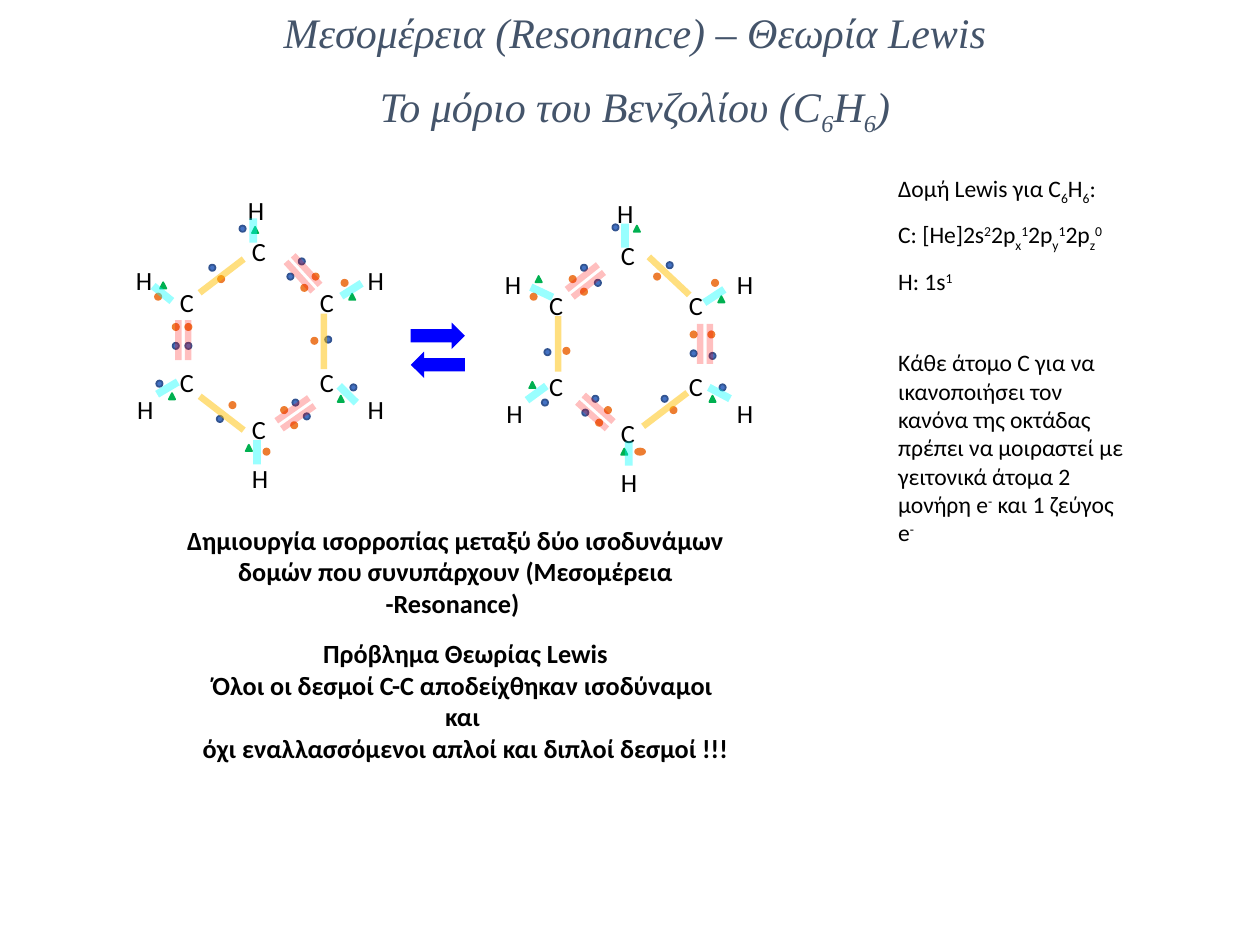
"""Build the slide on benzene resonance in Lewis theory."""
from lxml.etree import SubElement
from pptx import Presentation
from pptx.dml.color import RGBColor
from pptx.enum.shapes import MSO_SHAPE as SHAPE
from pptx.enum.text import MSO_ANCHOR, MSO_AUTO_SIZE, PP_ALIGN
from pptx.oxml.ns import qn
from pptx.util import Inches, Pt

BLACK = RGBColor(0x00, 0x00, 0x00)
SLATE = RGBColor(0x44, 0x54, 0x6A)
BLUE = RGBColor(0x44, 0x72, 0xC4)
DARK_BLUE = RGBColor(0x32, 0x54, 0x91)
ORANGE = RGBColor(0xED, 0x7D, 0x31)
GREEN = RGBColor(0x00, 0xB0, 0x50)
RED = RGBColor(0xFF, 0x00, 0x00)
GOLD = RGBColor(0xFF, 0xC0, 0x00)
CYAN = RGBColor(0x00, 0xFF, 0xFF)
ARROW_BLUE = RGBColor(0x00, 0x00, 0xFF)
BASELINES = {"_": "-25000", "~": "-30000", "^": "30000"}

presentation = Presentation()
presentation.slide_width, presentation.slide_height = Inches(10), Inches(7.5)
CELL = presentation.slide_width // 1000
slide = presentation.slides.add_slide(presentation.slide_layouts[5])


def add_mark(kind, box, fill, line=None, rotation=0, opacity=100):
    shape = slide.shapes.add_shape(kind, *(CELL * value for value in box))
    shape.shadow.inherit = False
    shape.rotation = rotation
    shape.fill.solid()
    shape.fill.fore_color.rgb = fill
    if line is None:
        shape.line.fill.background()
    else:
        shape.line.color.rgb = line
        shape.line.width = Pt(1)
    if opacity < 100:
        color = shape._element.spPr.find(qn("a:solidFill"))[0]
        SubElement(color, qn("a:alpha")).set("val", str(opacity * 1000))


def write_text(shape, box, paragraphs, size, color=BLACK, font="Calibri",
               align=PP_ALIGN.LEFT, gaps=(), bold=False, italic=False):
    shape.left, shape.top, shape.width, shape.height = (CELL * value for value in box)
    frame = shape.text_frame
    frame.word_wrap = True
    frame.auto_size = MSO_AUTO_SIZE.NONE
    frame.vertical_anchor = MSO_ANCHOR.TOP
    for index, pieces in enumerate(paragraphs):
        paragraph = frame.add_paragraph() if index else frame.paragraphs[0]
        paragraph.alignment = align
        if gaps:
            paragraph.space_before = Pt(gaps[index])
        for piece in pieces:
            run = paragraph.add_run()
            run.text = piece.lstrip("_~^")
            run.font.size, run.font.name = Pt(size), font
            run.font.bold, run.font.italic = bold, italic
            run.font.color.rgb = color
            if piece[0] in BASELINES:
                run._r.get_or_add_rPr().set("baseline", BASELINES[piece[0]])


write_text(
    slide.shapes.title, (75, 0, 858, 111),
    [["Μεσομέρεια (Resonance) – Θεωρία Lewis"],
     ["Το μόριο του Βενζολίου (C", "_6", "H", "_6", ")"]],
    24, SLATE, "Times New Roman", PP_ALIGN.CENTER, (13.5, 13.5), italic=True)

ATOMS = {
    "C": [(190, 182), (133, 222), (133, 286), (244, 222), (190, 323), (244, 286)],
    "H": [(98, 205), (190, 362), (282, 205), (187, 149), (99, 307), (282, 307)],
}
for ring_x, ring_y in [(0, 0), (293, 3)]:
    for symbol, spots in ATOMS.items():
        for x, y in spots:
            box = (x + ring_x, y + ring_y, 27, 35)
            write_text(slide.shapes.add_textbox(0, 0, 0, 0), box, [[symbol]], 15)

ELECTRONS = [
    (SHAPE.OVAL, BLUE, DARK_BLUE, [
        (166, 210), (237, 205), (228, 217), (190, 179), (258, 267), (232, 317),
        (241, 328), (278, 305), (172, 330), (124, 302), (137, 272), (147, 272),
        (529, 208), (461, 210), (472, 222), (486, 178), (548, 278), (563, 280),
        (571, 305), (525, 314), (470, 314), (462, 325), (430, 317), (432, 277)]),
    (SHAPE.OVAL, ORANGE, ORANGE, [
        (239, 226), (248, 217), (271, 222), (247, 268), (223, 323), (231, 335),
        (209, 356), (182, 319), (137, 257), (147, 257), (123, 233), (173, 219),
        (519, 217), (548, 263), (562, 263), (565, 222), (532, 323), (480, 323),
        (473, 333), (447, 276), (452, 219), (461, 229), (421, 233)]),
    (SHAPE.ISOSCELES_TRIANGLE, GREEN, GREEN, [
        (127, 224), (277, 233), (200, 180), (268, 314), (195, 353), (134, 312),
        (425, 219), (503, 179), (570, 235), (563, 314), (493, 356), (420, 303)]),
]
for kind, fill, line, spots in ELECTRONS:
    for x, y in spots:
        add_mark(kind, (x, y, 5, 5), fill, line)
add_mark(SHAPE.OVAL, (504, 356, 8, 5), ORANGE, ORANGE)

BONDS = [
    (SHAPE.MATH_EQUAL, RED, 25, 43, 22, [
        (219, 206, 47.8), (443, 212, 141.7), (124, 259, 90),
        (213, 317, 324.9), (451, 316, 41.7), (538, 262, 90)]),
    (SHAPE.MATH_MINUS, GOLD, 50, 60, 22, [
        (146, 317, 37.6), (227, 260, 90), (498, 314, 322.7),
        (146, 208, 322.6), (501, 208, 43.2), (413, 262, 90)]),
    (SHAPE.MATH_MINUS, CYAN, 40, 26, 26, [
        (116, 220, 38.9), (188, 170, 90), (266, 217, 327.6), (263, 300, 44.6),
        (191, 346, 90), (120, 295, 329.3), (413, 299, 323.7), (486, 347, 90),
        (558, 299, 28), (554, 222, 326.6), (417, 219, 25.1), (483, 174, 90)]),
]
for kind, fill, opacity, width, height, spots in BONDS:
    for x, y, rotation in spots:
        add_mark(kind, (x, y, width, height), fill, None, rotation, opacity)

for y, rotation in [(256, 0), (279, 180)]:
    add_mark(SHAPE.RIGHT_ARROW, (326, y, 43, 21), ARROW_BLUE, rotation=rotation)

write_text(
    slide.shapes.add_textbox(0, 0, 0, 0), (703, 133, 199, 294),
    [["Δομή Lewis για C", "_6", "H", "_6", ":"],
     ["C: [He]2s", "^2", "2p", "~x", "^1", "2p", "~y", "^1", "2p", "~z", "^0"],
     ["H: 1s", "^1"],
     ["Κάθε άτομο C για να ικανοποιήσει τον κανόνα της οκτάδας πρέπει να "
      "μοιραστεί με γειτονικά άτομα 2 μονήρη e", "^-", " και 1 ζεύγος e", "^-"]],
    13.5, gaps=(8, 8, 8, 30))

write_text(
    slide.shapes.add_textbox(0, 0, 0, 0), (138, 411, 447, 86),
    [["Δημιουργία ισορροπίας μεταξύ δύο ισοδυνάμων δομών που συνυπάρχουν "
      "(Μεσομέρεια -Resonance) "]],
    15, align=PP_ALIGN.CENTER, bold=True)

write_text(
    slide.shapes.add_textbox(0, 0, 0, 0), (-48, 501, 835, 111),
    [["Πρόβλημα Θεωρίας Lewis"],
     ["Όλοι οι δεσμοί C-C αποδείχθηκαν ισοδύναμοι "],
     ["και "],
     ["όχι εναλλασσόμενοι απλοί και διπλοί δεσμοί !!!"]],
    15, align=PP_ALIGN.CENTER, bold=True)

presentation.save("out.pptx")
